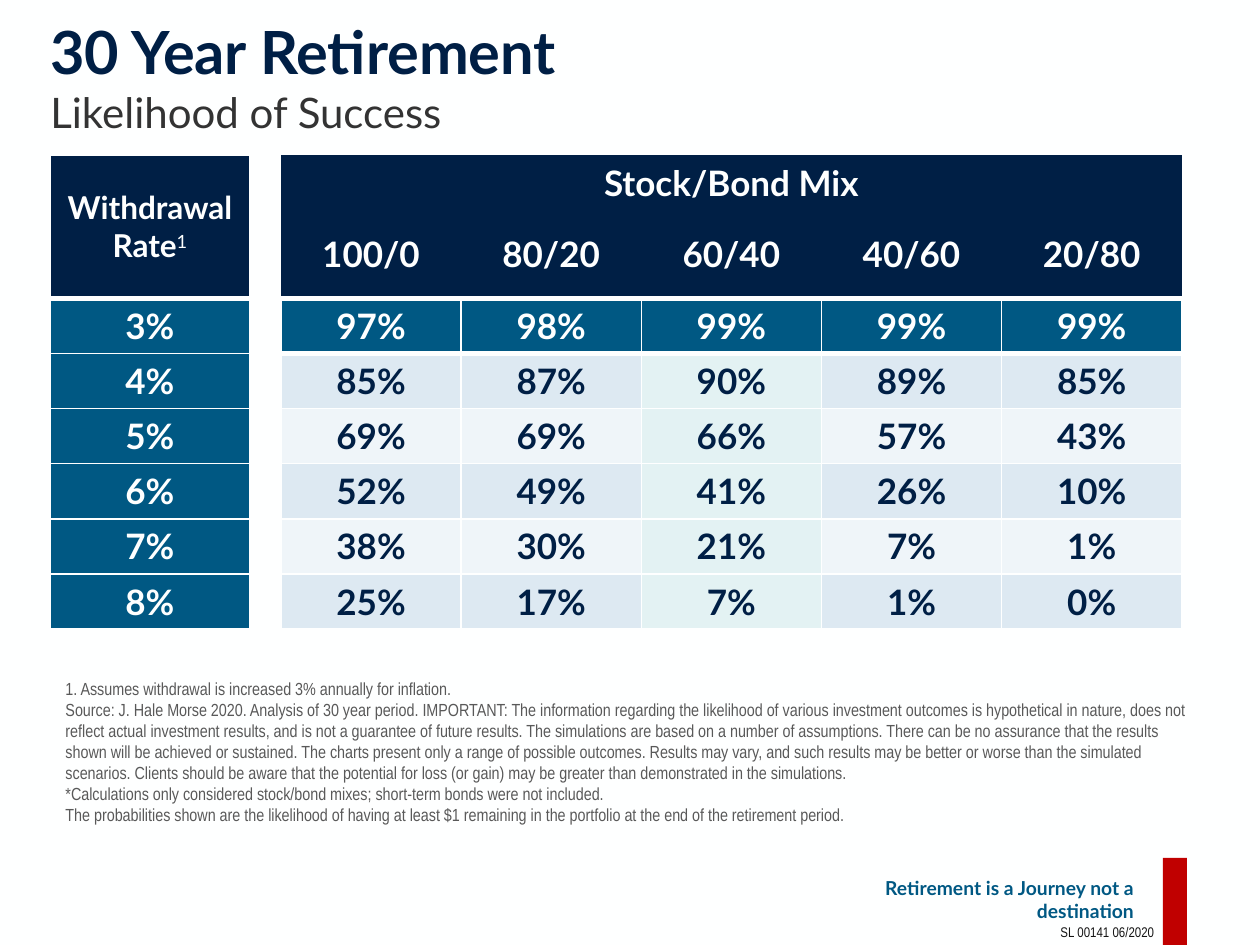
from lxml import etree
from pptx import Presentation
from pptx import util as u
from pptx.dml.color import RGBColor
from pptx.enum import shapes, text
from pptx.oxml.ns import qn

COLORS = {
    "white": "FEFFFF", "navy": "001F45", "teal": "005883", "red": "C00000",
    "blue": "DDE9F2", "pale": "EFF5F9", "mint": "E3F2F3",
    "subtitle": "333333", "note": "595959", "code": "141414",
}
MIXES = ["100/0", "80/20", "60/40", "40/60", "20/80"]
SUCCESS = {
    "3%": [97, 98, 99, 99, 99],
    "4%": [85, 87, 90, 89, 85],
    "5%": [69, 69, 66, 57, 43],
    "6%": [52, 49, 41, 26, 10],
    "7%": [38, 30, 21, 7, 1],
    "8%": [25, 17, 7, 1, 0],
}
NOTES = [
    "1. Assumes withdrawal is increased 3% annually for inflation.",
    "Source: J. Hale Morse 2020. Analysis of 30 year period. IMPORTANT: The information "
    "regarding the likelihood of various investment outcomes is hypothetical in nature, "
    "does not reflect actual investment results, and is not a guarantee of future results. "
    "The simulations are based on a number of assumptions. There can be no assurance that "
    "the results shown will be achieved or sustained. The charts present only a range of "
    "possible outcomes. Results may vary, and such results may be better or worse than the "
    "simulated scenarios. Clients should be aware that the potential for loss (or gain) may "
    "be greater than demonstrated in the simulations.",
    "*Calculations only considered stock/bond mixes; short-term bonds were not included.",
    "The probabilities shown are the likelihood of having at least $1 remaining in the "
    "portfolio at the end of the retirement period.",
]
LEFT, CENTER, RIGHT = text.PP_ALIGN.LEFT, text.PP_ALIGN.CENTER, text.PP_ALIGN.RIGHT
MIDDLE, BOTTOM, TOP = text.MSO_ANCHOR.MIDDLE, text.MSO_ANCHOR.BOTTOM, text.MSO_ANCHOR.TOP


def color(name):
    return RGBColor.from_string(COLORS[name])


def write(paragraph, words, size, ink, font="Lato", bold=False, align=LEFT):
    paragraph.alignment = align
    run = paragraph.add_run()
    run.text = words
    run.font.name, run.font.size, run.font.bold = font, u.Pt(size), bold
    run.font.color.rgb = color(ink)
    return run


def add_box(slide, left, top, width, height, anchor, insets=(0, 0, 0, 0)):
    frame = slide.shapes.add_textbox(*map(u.Inches, (left, top, width, height))).text_frame
    frame.word_wrap = True
    frame.vertical_anchor = anchor
    (frame.margin_left, frame.margin_top,
     frame.margin_right, frame.margin_bottom) = map(u.Inches, insets)
    return frame


def set_borders(cell, left=1, right=1, top=1, bottom=1):
    properties = cell._tc.get_or_add_tcPr()
    for side, width in zip("LRTB", (left, right, top, bottom)):
        line = etree.SubElement(properties, qn(f"a:ln{side}"), w=str(u.Pt(width)))
        if width:
            fill = etree.SubElement(line, qn("a:solidFill"))
            etree.SubElement(fill, qn("a:srgbClr"), val=COLORS["white"])
        else:
            etree.SubElement(line, qn("a:noFill"))


def style_cell(cell, fill=None, words="", ink="white", size=20, **borders):
    set_borders(cell, **borders)
    cell.vertical_anchor = MIDDLE
    if fill:
        cell.fill.solid()
        cell.fill.fore_color.rgb = color(fill)
    else:
        cell.fill.background()
    if words:
        write(cell.text_frame.paragraphs[0], words, size, ink, bold=True, align=CENTER)


def add_header(table):
    table.cell(0, 0).merge(table.cell(1, 0))
    table.cell(0, 1).merge(table.cell(1, 1))
    table.cell(0, 2).merge(table.cell(0, 6))
    style_cell(table.cell(0, 0), "navy", "Withdrawal Rate", size=18, bottom=3)
    note_mark = write(table.cell(0, 0).text_frame.paragraphs[0], "1", 18, "white", align=CENTER)
    note_mark.font._element.set("baseline", "30000")
    style_cell(table.cell(1, 0), "navy", bottom=3)
    for row in range(2):
        style_cell(table.cell(row, 1), right=0, bottom=0)
    for column, mix in enumerate(MIXES, 2):
        title = "Stock/Bond Mix" if column == 2 else ""
        style_cell(table.cell(0, column), "navy", title, left=0, right=0, top=0, bottom=0)
        style_cell(table.cell(1, column), "navy", mix, left=0, right=0, top=0, bottom=3)


def add_rates(table):
    for row, (rate, chances) in enumerate(SUCCESS.items(), 2):
        first = row == 2
        style_cell(table.cell(row, 0), "teal", rate, top=3 if first else 1)
        style_cell(table.cell(row, 1), top=0, bottom=0)
        band = "blue" if row % 2 else "pale"
        for column, chance in enumerate(chances, 2):
            fill = "teal" if first else "mint" if column == 4 else band
            style_cell(table.cell(row, column), fill, f"{chance}%",
                       ink="white" if first else "navy",
                       top=3 if row < 4 else 1, bottom=3 if first else 1)


def add_success_table(slide):
    frame = slide.shapes.add_table(8, 7, u.Inches(0.4), u.Inches(1.23), u.Inches(9), u.Inches(3.5))
    table = frame.table
    table.first_row = table.horz_banding = False
    for column, width in zip(table.columns, [1.58, 0.25] + [1.43] * 5):
        column.width = u.Inches(width)
    add_header(table)
    add_rates(table)


def add_footer(slide):
    accent = slide.shapes.add_shape(
        shapes.MSO_SHAPE.RECTANGLE, *map(u.Inches, (9.23, 6.81, 0.19, 0.7)))
    accent.shadow.inherit = False
    accent.fill.solid()
    accent.fill.fore_color.rgb = color("red")
    accent.line.fill.background()
    motto = add_box(slide, 6.31, 6.76, 2.69, 0.75, MIDDLE)
    write(motto.paragraphs[0], "Retirement is a Journey not a destination", 11, "teal",
          bold=True, align=RIGHT)


def add_notes(slide):
    notes = add_box(slide, 0.52, 5.37, 9, 1.23, BOTTOM, (0, 0, 0, 0.05))
    for index, note in enumerate(NOTES):
        paragraph = notes.add_paragraph() if index else notes.paragraphs[0]
        write(paragraph, note, 10, "note", "Arial Narrow")
    code = add_box(slide, 8.01, 7.28, 1.25, 0.24, TOP, (0.1, 0.05, 0.1, 0.05))
    write(code.paragraphs[0], "SL 00141 06/2020", 8, "code", "Arial Narrow", align=RIGHT)


def main():
    """Build the retirement success slide."""
    deck = Presentation()
    deck.slide_width, deck.slide_height = u.Inches(10), u.Inches(7.5)
    slide = deck.slides.add_slide(deck.slide_layouts[6])
    slide.background.fill.solid()
    slide.background.fill.fore_color.rgb = color("white")
    add_footer(slide)
    add_success_table(slide)
    heading = add_box(slide, 0.4, 0.1, 9.2, 1, MIDDLE).paragraphs[0]
    write(heading, "30 Year Retirement", 34, "navy", bold=True)
    heading.add_line_break()
    write(heading, "Likelihood of Success", 24, "subtitle")
    add_notes(slide)
    deck.save("out.pptx")


if __name__ == "__main__":
    main()
